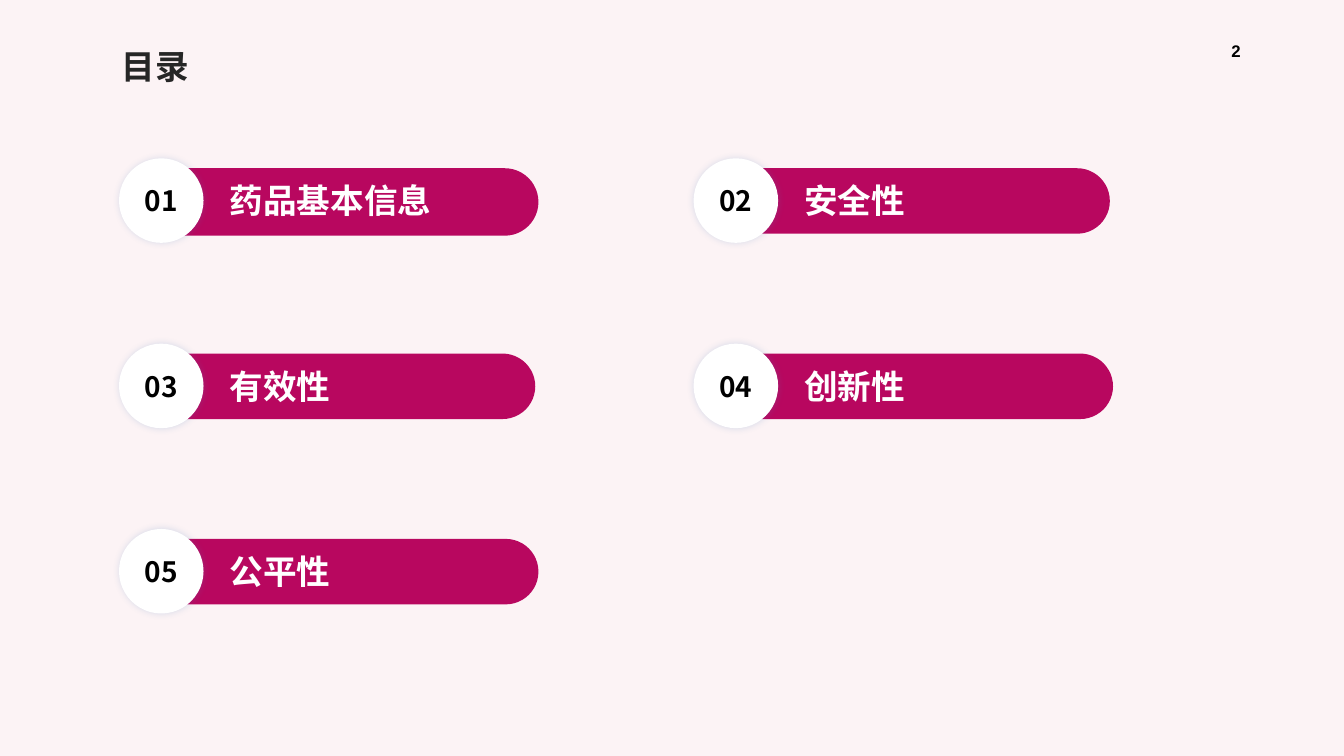
from dataclasses import dataclass

from lxml import etree
from pptx import Presentation
from pptx.dml.color import RGBColor
from pptx.enum.shapes import MSO_SHAPE
from pptx.enum.text import MSO_ANCHOR, PP_ALIGN
from pptx.oxml.ns import qn
from pptx.util import Cm, Pt

ROUND = MSO_SHAPE.ROUNDED_RECTANGLE
MIDDLE = MSO_ANCHOR.MIDDLE
CENTER = PP_ALIGN.CENTER


@dataclass(frozen=True)
class Theme:
    back: str = "FCF3F5"
    bar: str = "B8075F"
    white: str = "FFFFFF"
    black: str = "000000"
    title: str = "262626"
    glow: str = "4F81BD"
    font: str = "Noto Sans CJK SC"
    latin: str = "Arial"
    large: int = 24
    medium: int = 20
    small: int = 12


THEME = Theme()

# Topic, bar width and bar height in cm
TOPICS = [
    ("药品基本信息", 10.34, 1.7),
    ("安全性", 10.26, 1.65),
    ("有效性", 10.26, 1.65),
    ("创新性", 10.34, 1.65),
    ("公平性", 10.34, 1.65),
]
COLS = 2
LEFT, TOP = 3.0, 3.99
STEP_X, STEP_Y = 14.48, 4.67
BADGE = 2.13


def add_run(para, text, size, color, font=THEME.font):
    run = para.add_run()
    run.text = text
    run.font.size = Pt(size)
    run.font.bold = True
    run.font.name = font
    run.font.color.rgb = RGBColor.from_string(color)
    # East Asian glyphs take their typeface from a separate element
    east = etree.SubElement(run.font._element, qn("a:ea"))
    east.set("typeface", font)


def add_text(shapes, box, text, size, color, font=THEME.font):
    frame = shapes.add_textbox(*map(Cm, box)).text_frame
    frame.word_wrap = True
    add_run(frame.paragraphs[0], text, size, color, font)


def add_pill(shapes, box, color):
    pill = shapes.add_shape(ROUND, *map(Cm, box))
    pill.adjustments[0] = 0.5
    pill.shadow.inherit = False
    pill.fill.solid()
    pill.fill.fore_color.rgb = RGBColor.from_string(color)
    pill.line.fill.background()
    return pill


def add_glow(shape):
    """Give the shape a soft shadow, even on all sides."""
    effects = shape._element.spPr.find(qn("a:effectLst"))
    shadow = etree.SubElement(effects, qn("a:outerShdw"), blurRad=str(Pt(5)),
                              dist="0", dir="0", algn="ctr", rotWithShape="0")
    color = etree.SubElement(shadow, qn("a:srgbClr"), val=THEME.glow)
    etree.SubElement(color, qn("a:alpha"), val="20000")


def add_badge(shapes, x, y, text):
    badge = add_pill(shapes, (x, y, BADGE, BADGE), THEME.white)
    add_glow(badge)
    frame = badge.text_frame
    frame.margin_left = frame.margin_right = 0
    frame.vertical_anchor = MIDDLE
    para = frame.paragraphs[0]
    para.alignment = CENTER
    add_run(para, text, THEME.medium, THEME.black)


def add_topic(slide, index, topic, width, height):
    row, col = divmod(index, COLS)
    x, y = LEFT + col * STEP_X, TOP + row * STEP_Y
    shapes = slide.shapes.add_group_shape().shapes
    add_pill(shapes, (x + 0.23, y + 0.25, width, height), THEME.bar)
    add_text(shapes, (x + 2.54, y + 0.43, 7.57, 1.27), topic,
             THEME.large, THEME.white)
    add_badge(shapes, x, y, f"{index + 1:02}")


def main():
    deck = Presentation()
    deck.slide_width, deck.slide_height = Cm(33.87), Cm(19.05)
    slide = deck.slides.add_slide(deck.slide_layouts[6])
    fill = slide.background.fill
    fill.solid()
    fill.fore_color.rgb = RGBColor.from_string(THEME.back)

    add_text(slide.shapes, (2.82, 1.02, 28.73, 1.63), "目录",
             THEME.large, THEME.title)
    for index, topic in enumerate(TOPICS):
        add_topic(slide, index, *topic)
    add_text(slide.shapes, (30.78, 0.91, 3.07, 1.02), "2",
             THEME.small, THEME.black, THEME.latin)
    deck.save("out.pptx")


if __name__ == "__main__":
    main()
